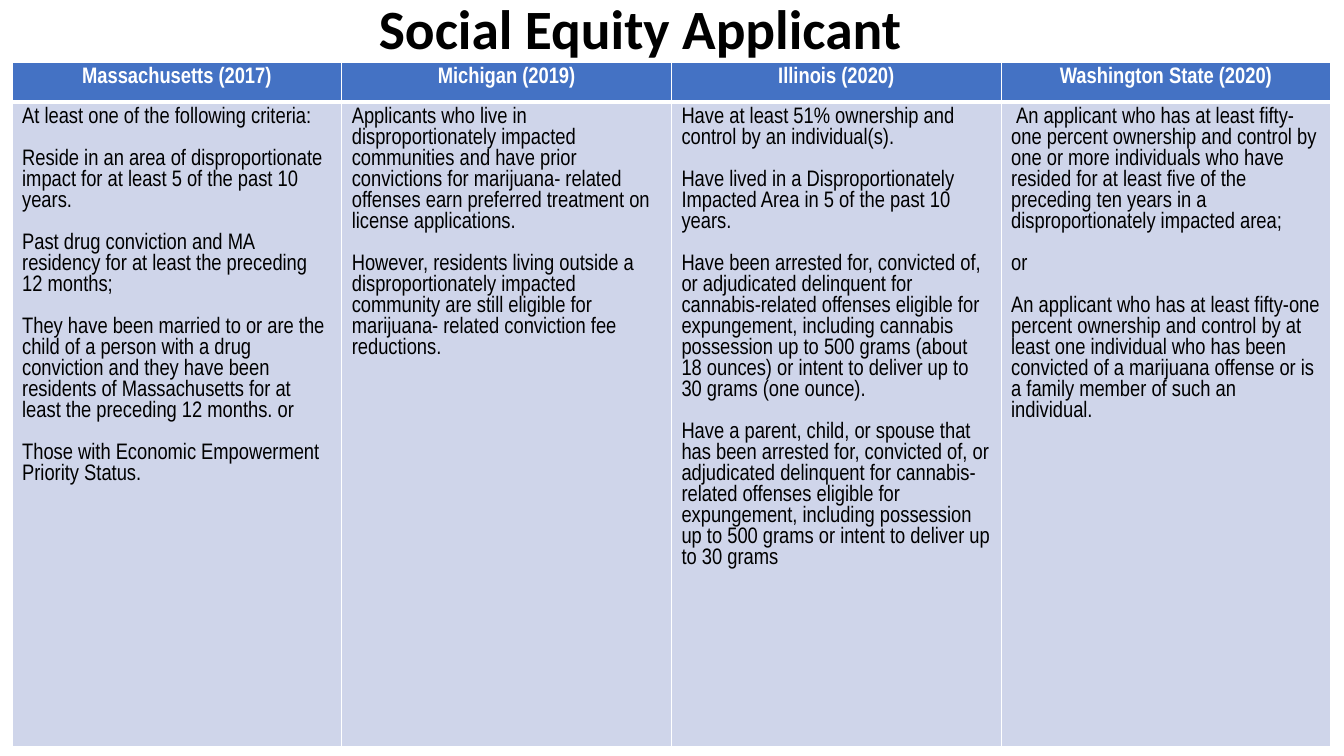
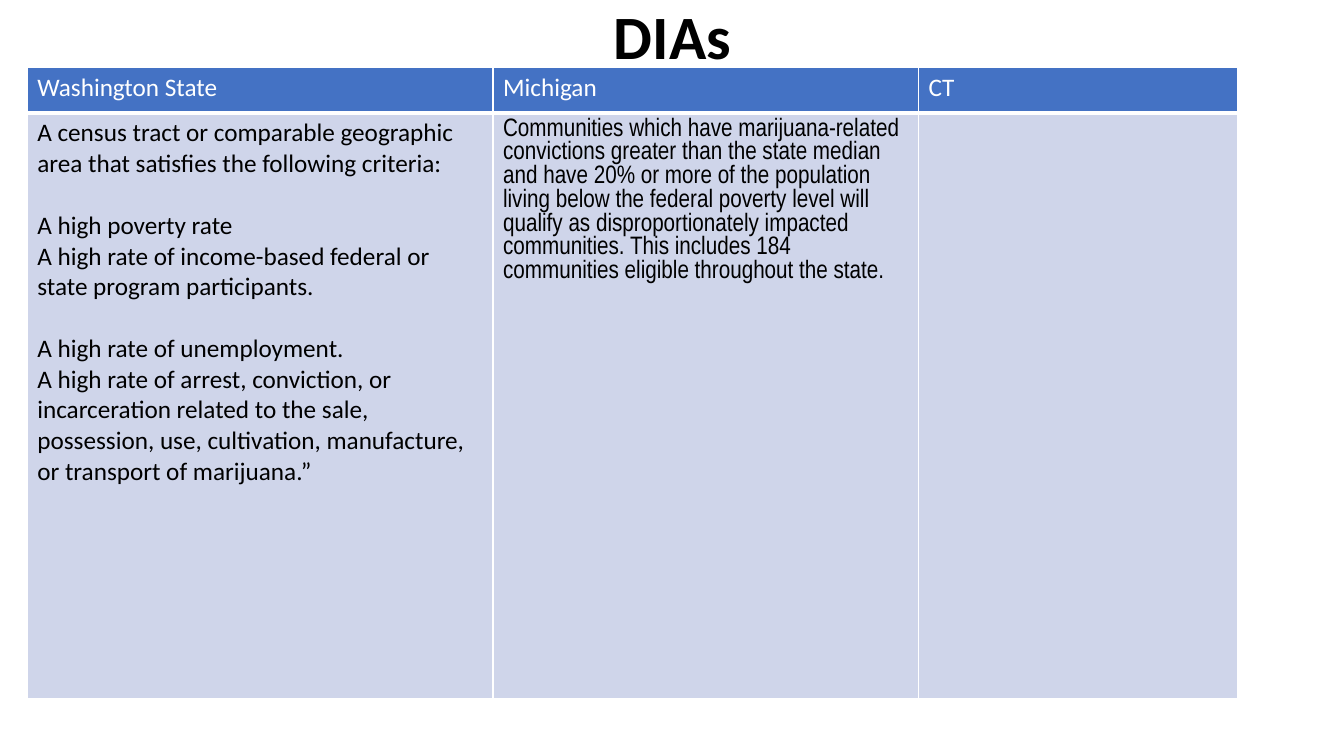
from lxml import etree
from pptx import Presentation
from pptx.dml.color import RGBColor
from pptx.enum.text import MSO_ANCHOR, MSO_AUTO_SIZE, PP_ALIGN
from pptx.oxml.ns import qn
from pptx.util import Inches, Pt

CENTER, LEFT = PP_ALIGN.CENTER, PP_ALIGN.LEFT
MIDDLE = MSO_ANCHOR.MIDDLE
NO_AUTOFIT = MSO_AUTO_SIZE.NONE

COLORS = {"header": "4472C4", "body": "CFD5EA", "line": "FFFFFF",
          "header_text": "FFFFFF", "text": "000000"}
NARROW, SANS = "Arial Narrow", "Calibri"

# Each body cell is a list of blocks, and each block a list of paragraphs.
# A gap of one text line separates the blocks.
SLIDES = [
    {
        "title": "Social Equity Applicant",
        "title_box": (0.6, 0.09, 11.5, 0.44), "title_size": 39.6,
        "origin": (0.12, 0.62), "columns": [3.27] * 4, "rows": [0.39, 6.4],
        "size": 16, "gap": 15,
        "header_font": NARROW, "header_bold": True, "header_align": CENTER,
        "body_fonts": [NARROW] * 4,
        "first_indents": [0, 0, 0, 0.05],
        "headers": ["Massachusetts (2017)", "Michigan (2019)",
                    "Illinois (2020)", "Washington State (2020)"],
        "cells": [
            [
                ["At least one of the following criteria:"],
                ["Reside in an area of disproportionate impact for at least "
                 "5 of the past 10 years."],
                ["Past drug conviction and MA residency for at least the "
                 "preceding 12 months;"],
                ["They have been married to or are the child of a person with "
                 "a drug conviction and they have been residents of "
                 "Massachusetts for at least the preceding 12 months. or"],
                ["Those with Economic Empowerment Priority Status."],
            ],
            [
                ["Applicants who live in disproportionately impacted "
                 "communities and have prior convictions for marijuana- "
                 "related offenses earn preferred treatment on license "
                 "applications."],
                ["However, residents living outside a disproportionately "
                 "impacted community are still eligible for marijuana- "
                 "related conviction fee reductions."],
            ],
            [
                ["Have at least 51% ownership and control by an "
                 "individual(s)."],
                ["Have lived in a Disproportionately Impacted Area in 5 of "
                 "the past 10 years."],
                ["Have been arrested for, convicted of, or adjudicated "
                 "delinquent for cannabis-related offenses eligible for "
                 "expungement, including cannabis possession up to 500 grams "
                 "(about 18 ounces) or intent to deliver up to 30 grams "
                 "(one ounce)."],
                ["Have a parent, child, or spouse that has been arrested for, "
                 "convicted of, or adjudicated delinquent for "
                 "cannabis-related offenses eligible for expungement, "
                 "including possession up to 500 grams or intent to deliver "
                 "up to 30 grams"],
            ],
            [
                ["An applicant who has at least fifty-one percent ownership "
                 "and control by one or more individuals who have resided for "
                 "at least five of the preceding ten years in a "
                 "disproportionately impacted area;"],
                ["or"],
                ["An applicant who has at least fifty-one percent ownership "
                 "and control by at least one individual who has been "
                 "convicted of a marijuana offense or is a family member of "
                 "such an individual."],
            ],
        ],
    },
    {
        "title": "DIAs",
        "title_box": (0.92, 0, 11.5, 0.79), "title_size": 44,
        "origin": (0.27, 0.67), "columns": [4.62, 4.22, 3.17],
        "rows": [0.45, 5.81],
        "size": 18, "gap": 22,
        "header_font": SANS, "header_bold": False, "header_align": LEFT,
        "body_fonts": [SANS, NARROW, SANS],
        "first_indents": [0, 0, 0],
        "headers": ["Washington State", "Michigan", "CT"],
        "cells": [
            [
                ["A census tract or comparable geographic area that satisfies "
                 "the following criteria:"],
                ["A high poverty rate",
                 "A high rate of income-based federal or state program "
                 "participants."],
                ["A high rate of unemployment.",
                 "A high rate of arrest, conviction, or incarceration related "
                 "to the sale, possession, use, cultivation, manufacture, or "
                 "transport of marijuana.”"],
            ],
            [
                ["Communities which have marijuana-related convictions "
                 "greater than the state median and have 20% or more of the "
                 "population living below the federal poverty level will "
                 "qualify as disproportionately impacted communities. This "
                 "includes 184 communities eligible throughout the state."],
            ],
            [],
        ],
    },
]


def write(para, text, font, size, color, bold, align):
    para.alignment = align
    span = para.add_run()
    span.text = text
    values = {"name": font, "size": Pt(size), "bold": bold}
    for name, value in values.items():
        setattr(span.font, name, value)
    span.font.color.rgb = RGBColor.from_string(COLORS[color])


def style_cell(cell, fill, bottom_width):
    # Borders come before the fill in the cell properties
    properties = cell._tc.get_or_add_tcPr()
    widths = {"lnL": 1, "lnR": 1, "lnT": 1, "lnB": bottom_width}
    for side, width in widths.items():
        line = etree.SubElement(properties, qn("a:" + side), w=str(Pt(width)))
        solid = etree.SubElement(line, qn("a:solidFill"))
        etree.SubElement(solid, qn("a:srgbClr"), val=COLORS["line"])
    cell.fill.solid()
    cell.fill.fore_color.rgb = RGBColor.from_string(COLORS[fill])


deck = Presentation()
deck.slide_width, deck.slide_height = Inches(13.33), Inches(7.5)
title_only = deck.slide_layouts[5]

for content in SLIDES:
    page = deck.slides.add_slide(title_only)

    # Title
    title = page.shapes.title
    for name, value in zip(("left", "top", "width", "height"),
                           content["title_box"]):
        setattr(title, name, Inches(value))
    frame = title.text_frame
    frame.auto_size = NO_AUTOFIT
    frame.word_wrap = True
    frame.vertical_anchor = MIDDLE
    para = frame.paragraphs[0]
    para.line_spacing = 0.9
    write(para, content["title"], SANS, content["title_size"], "text", True,
          CENTER)

    # Table grid
    columns, rows = content["columns"], content["rows"]
    left, top = content["origin"]
    table = page.shapes.add_table(
        len(rows), len(columns), Inches(left), Inches(top),
        Inches(sum(columns)), Inches(sum(rows))).table
    table.horz_banding = False
    for column, width in zip(table.columns, columns):
        column.width = Inches(width)
    for row, height in zip(table.rows, rows):
        row.height = Inches(height)

    for index, heading in enumerate(content["headers"]):
        # Header cell
        header = table.cell(0, index)
        style_cell(header, "header", 3)
        write(header.text_frame.paragraphs[0], heading,
              content["header_font"], content["size"], "header_text",
              content["header_bold"], content["header_align"])

        # Body cell
        body = table.cell(1, index)
        style_cell(body, "body", 1)
        para = body.text_frame.paragraphs[0]
        indent = Inches(content["first_indents"][index])
        if indent:
            para._p.get_or_add_pPr().set("indent", str(indent))
        for block_number, block in enumerate(content["cells"][index]):
            for line_number, text in enumerate(block):
                if block_number or line_number:
                    para = body.text_frame.add_paragraph()
                if block_number and not line_number:
                    para.space_before = Pt(content["gap"])
                write(para, text, content["body_fonts"][index],
                      content["size"], "text", False, LEFT)

deck.save("out.pptx")
